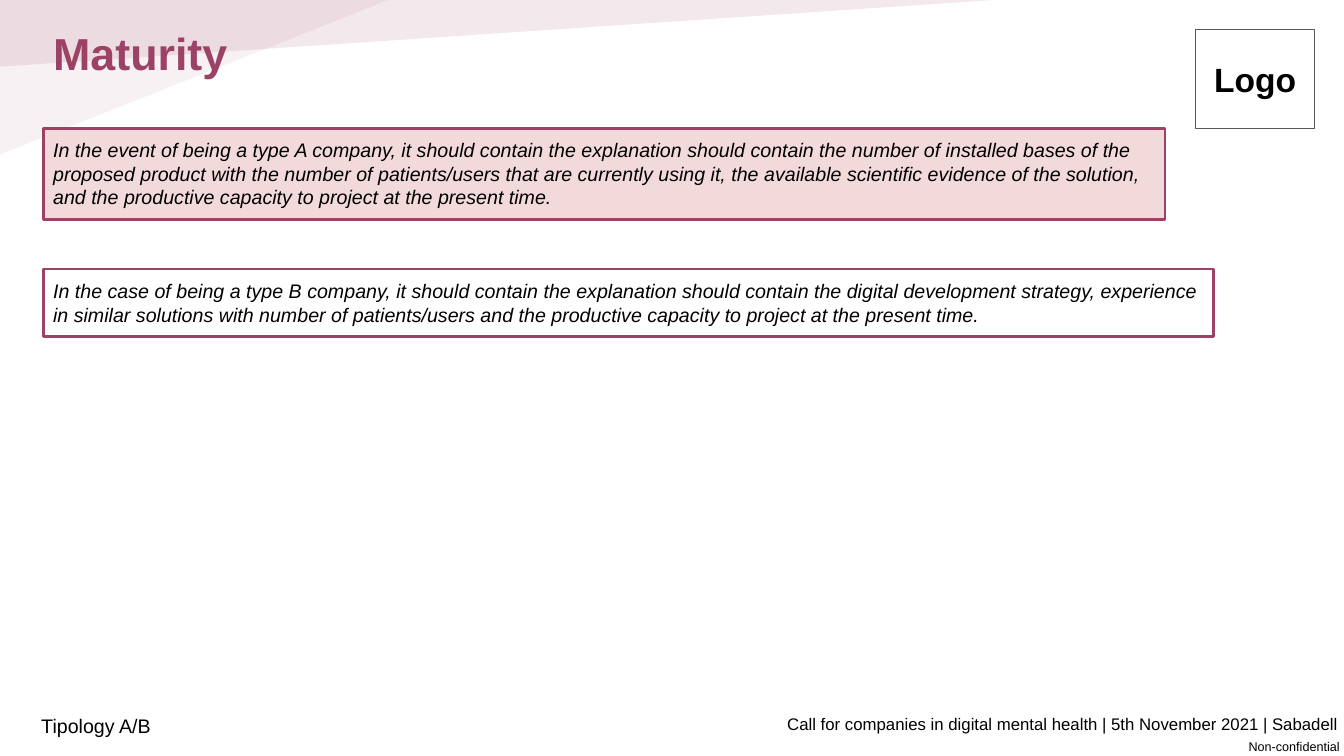
from lxml import etree
from pptx import Presentation
from pptx.dml.color import RGBColor
from pptx.enum.shapes import MSO_SHAPE
from pptx.enum.text import MSO_ANCHOR, PP_ALIGN
from pptx.oxml.ns import qn
from pptx.util import Cm, Pt

RECT, TRIANGLE = MSO_SHAPE.RECTANGLE, MSO_SHAPE.RIGHT_TRIANGLE
LEFT, CENTER, RIGHT = PP_ALIGN.LEFT, PP_ALIGN.CENTER, PP_ALIGN.RIGHT
TOP, MIDDLE = MSO_ANCHOR.TOP, MSO_ANCHOR.MIDDLE
PLUM, BLACK = "9C4266", "000000"


def color(hex_string):
    return RGBColor.from_string(hex_string)


def add_text(sp, text, size, hex_color=BLACK, align=LEFT, bold=False, italic=False,
             anchor=TOP, margin=0.13):
    """Put one run of Arial into a shape; margin is the top and bottom inset in cm."""
    tf = sp.text_frame
    tf.word_wrap = True
    tf.vertical_anchor = anchor
    tf.margin_left = tf.margin_right = Cm(0.25)
    tf.margin_top = tf.margin_bottom = Cm(margin)
    p = tf.paragraphs[0]
    p.alignment = align
    r = p.add_run()
    r.text = text
    r.font.name = "Arial"
    r.font.size = Pt(size)
    r.font.bold = bold
    r.font.italic = italic
    r.font.color.rgb = color(hex_color)


prs = Presentation()
prs.slide_width, prs.slide_height = Cm(33.87), Cm(19.05)
s = prs.slides.add_slide(prs.slide_layouts[6])

# Translucent corner triangles, right angle at the top left
for width, height, fill, opacity in [(25.04, 1.68, "EBD9DF", 60), (9.78, 3.89, "9E546D", 8)]:
    sp = s.shapes.add_shape(TRIANGLE, 0, 0, Cm(width), Cm(height))
    sp.shadow.inherit = False
    sp.rotation = 180
    sp._element.spPr.find(qn("a:xfrm")).set("flipH", "1")
    sp.fill.solid()
    sp.fill.fore_color.rgb = color(fill)
    sp.line.fill.background()
    rgb = sp._element.spPr.find(qn("a:solidFill"))[0]
    etree.SubElement(rgb, qn("a:alpha")).set("val", str(opacity * 1000))

title = s.shapes.add_textbox(Cm(1.09), Cm(0.53), Cm(26.52), Cm(3.28))
add_text(title, "Maturity", 32, PLUM, bold=True)

# One explanation box per company type
explanations = [
    (3.23, 28.27, 2.31, "F2DADA",
     "In the event of being a type A company, it should contain the explanation should "
     "contain the number of installed bases of the proposed product with the number of "
     "patients/users that are currently using it, the available scientific evidence of the "
     "solution, and the productive capacity to project at the present time."),
    (6.78, 29.49, 1.7, "FFFFFF",
     "In the case of being a type B company, it should contain the explanation should "
     "contain the digital development strategy, experience in similar solutions with number "
     "of patients/users and the productive capacity to project at the present time."),
]
for top, width, height, fill, text in explanations:
    sp = s.shapes.add_shape(RECT, Cm(1.09), Cm(top), Cm(width), Cm(height))
    sp.shadow.inherit = False
    sp.fill.solid()
    sp.fill.fore_color.rgb = color(fill)
    sp.line.color.rgb = color(PLUM)
    sp.line.width = Pt(2)
    add_text(sp, text, 14, italic=True, margin=0.25)

footers = [
    (19.38, 17.86, 14.6, 0.76, 12, RIGHT,
     "Call for companies in digital mental health | 5th November 2021 | Sabadell"),
    (31.19, 18.49, 2.82, 0.64, 9, RIGHT, "Non-confidential"),
    (0.79, 17.86, 3.81, 0.86, 14, LEFT, "Tipology A/B"),
]
for left, top, width, height, size, align, text in footers:
    footer = s.shapes.add_textbox(Cm(left), Cm(top), Cm(width), Cm(height))
    add_text(footer, text, size, align=align)

logo_box = s.shapes.add_shape(RECT, Cm(30.12), Cm(0.74), Cm(3.02), Cm(2.49))
logo_box.shadow.inherit = False
logo_box.fill.background()
logo_box.line.color.rgb = color("595959")
logo_box.line.width = Pt(0.75)
add_text(logo_box, "Logo", 24, align=CENTER, bold=True, anchor=MIDDLE)

prs.save("out.pptx")
